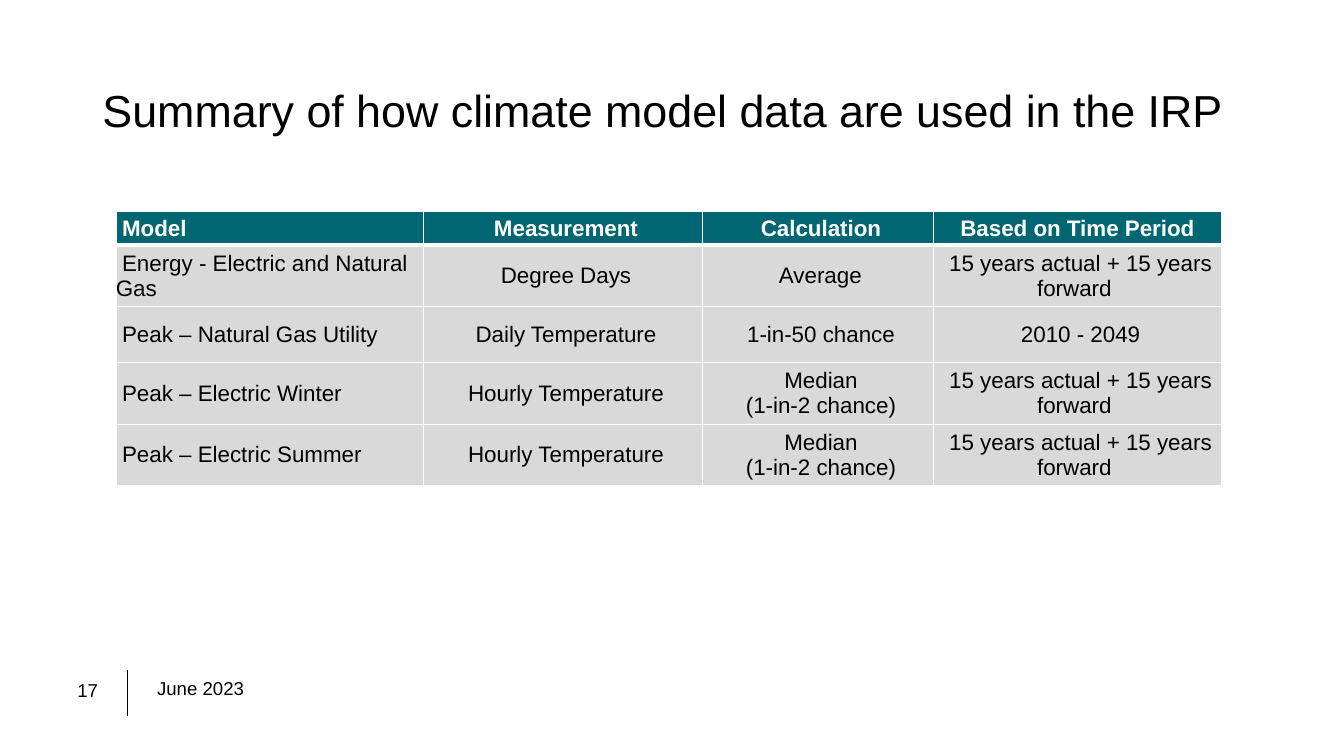
from dataclasses import dataclass

from lxml import etree
from pptx import Presentation
from pptx.dml.color import RGBColor
from pptx.enum import shapes, text
from pptx.oxml import ns
from pptx.util import Pt


@dataclass(frozen=True)
class Theme:
    font: str = "Arial"
    black: str = "000000"
    white: str = "FFFFFF"
    header_fill: str = "006671"
    body_fill: str = "D9D9D9"
    title_size: float = 32
    table_size: float = 16
    footer_size: float = 13.3
    rule: float = 1
    header_rule: float = 3


@dataclass(frozen=True)
class FooterItem:
    wording: str
    left: float
    top: float
    width: float
    height: float
    anchor: text.MSO_ANCHOR
    line_spacing: float


THEME = Theme()
COLUMN_WIDTHS = (219.6, 199.4, 164.9, 205.9)
ROW_HEIGHTS = (24, 44, 40, 44, 44)
PERIOD = " 15 years actual + 15 years forward "
MEDIAN = " Median\n (1-in-2 chance)"
USES = (
    (" Model", " Measurement", " Calculation", "Based on Time Period"),
    (" Energy - Electric and Natural Gas ", " Degree Days", " Average", PERIOD),
    (" Peak – Natural Gas Utility", " Daily Temperature", " 1-in-50 chance", " 2010 - 2049"),
    (" Peak – Electric Winter", " Hourly Temperature", MEDIAN, PERIOD),
    (" Peak – Electric Summer", " Hourly Temperature", MEDIAN, PERIOD),
)
FOOTER = (
    FooterItem("17", 48.2, 481, 40.3, 23.8, text.MSO_ANCHOR.MIDDLE, 1),
    FooterItem("June 2023", 105.1, 481.7, 332, 23.8, text.MSO_ANCHOR.TOP, 0.9),
)


def format_text(frame, size: float, color: str, bold: bool = False,
                align=text.PP_ALIGN.LEFT, spacing: float = 1) -> None:
    for paragraph in frame.paragraphs:
        paragraph.alignment = align
        paragraph.line_spacing = spacing
        for run in paragraph.runs:
            run.font.name = THEME.font
            run.font.size = Pt(size)
            run.font.bold = bold
            run.font.color.rgb = RGBColor.from_string(color)


def set_borders(cell, top: float, bottom: float) -> None:
    properties = cell._tc.get_or_add_tcPr()
    sides = (("lnL", THEME.rule), ("lnR", THEME.rule), ("lnT", top), ("lnB", bottom))
    for position, (side, width) in enumerate(sides):
        border = etree.Element(ns.qn(f"a:{side}"), w=str(Pt(width)))
        fill = etree.SubElement(border, ns.qn("a:solidFill"))
        etree.SubElement(fill, ns.qn("a:srgbClr"), val=THEME.white)
        properties.insert(position, border)


def add_title(slide) -> None:
    title = slide.shapes.title
    title.left, title.top, title.width, title.height = Pt(66), Pt(28.8), Pt(828), Pt(104.4)
    frame = title.text_frame
    frame.text = "Summary of how climate model data are used in the IRP"
    frame.word_wrap = True
    frame.auto_size = text.MSO_AUTO_SIZE.NONE
    frame.vertical_anchor = text.MSO_ANCHOR.MIDDLE
    format_text(frame, THEME.title_size, THEME.black, spacing=0.9)


def add_uses_table(slide) -> None:
    table = slide.shapes.add_table(
        len(ROW_HEIGHTS), len(COLUMN_WIDTHS), Pt(82.8), Pt(151.2),
        Pt(sum(COLUMN_WIDTHS)), Pt(sum(ROW_HEIGHTS))).table
    table.horz_banding = False
    for column, width in zip(table.columns, COLUMN_WIDTHS):
        column.width = Pt(width)
    for r, (row, height) in enumerate(zip(table.rows, ROW_HEIGHTS)):
        row.height = Pt(height)
        header = r == 0
        for c, cell in enumerate(row.cells):
            cell.text_frame.text = USES[r][c]
            cell.vertical_anchor = text.MSO_ANCHOR.MIDDLE
            cell.margin_left = cell.margin_right = cell.margin_top = cell.margin_bottom = 0
            cell.fill.solid()
            cell.fill.fore_color.rgb = RGBColor.from_string(
                THEME.header_fill if header else THEME.body_fill)
            set_borders(cell, THEME.header_rule if r == 1 else THEME.rule,
                        THEME.header_rule if header else THEME.rule)
            format_text(cell.text_frame, THEME.table_size,
                        THEME.white if header else THEME.black, header,
                        text.PP_ALIGN.CENTER if c else text.PP_ALIGN.LEFT)


def add_footer(slide) -> None:
    for item in FOOTER:
        frame = slide.shapes.add_textbox(
            Pt(item.left), Pt(item.top), Pt(item.width), Pt(item.height)).text_frame
        frame.text = item.wording
        frame.word_wrap = True
        frame.vertical_anchor = item.anchor
        format_text(frame, THEME.footer_size, THEME.black, spacing=item.line_spacing)
    divider = slide.shapes.add_connector(
        shapes.MSO_CONNECTOR.STRAIGHT, Pt(90.9), Pt(478.8), Pt(90.9), Pt(511.2))
    divider.line.color.rgb = RGBColor.from_string(THEME.black)
    divider.line.width = Pt(0.75)
    etree.SubElement(divider._element.spPr, ns.qn("a:effectLst"))


def main() -> None:
    deck = Presentation()
    deck.slide_width, deck.slide_height = Pt(960), Pt(540)
    slide = deck.slides.add_slide(deck.slide_layouts.get_by_name("Title Only"))
    add_title(slide)
    add_uses_table(slide)
    add_footer(slide)
    deck.save("out.pptx")


if __name__ == "__main__":
    main()
